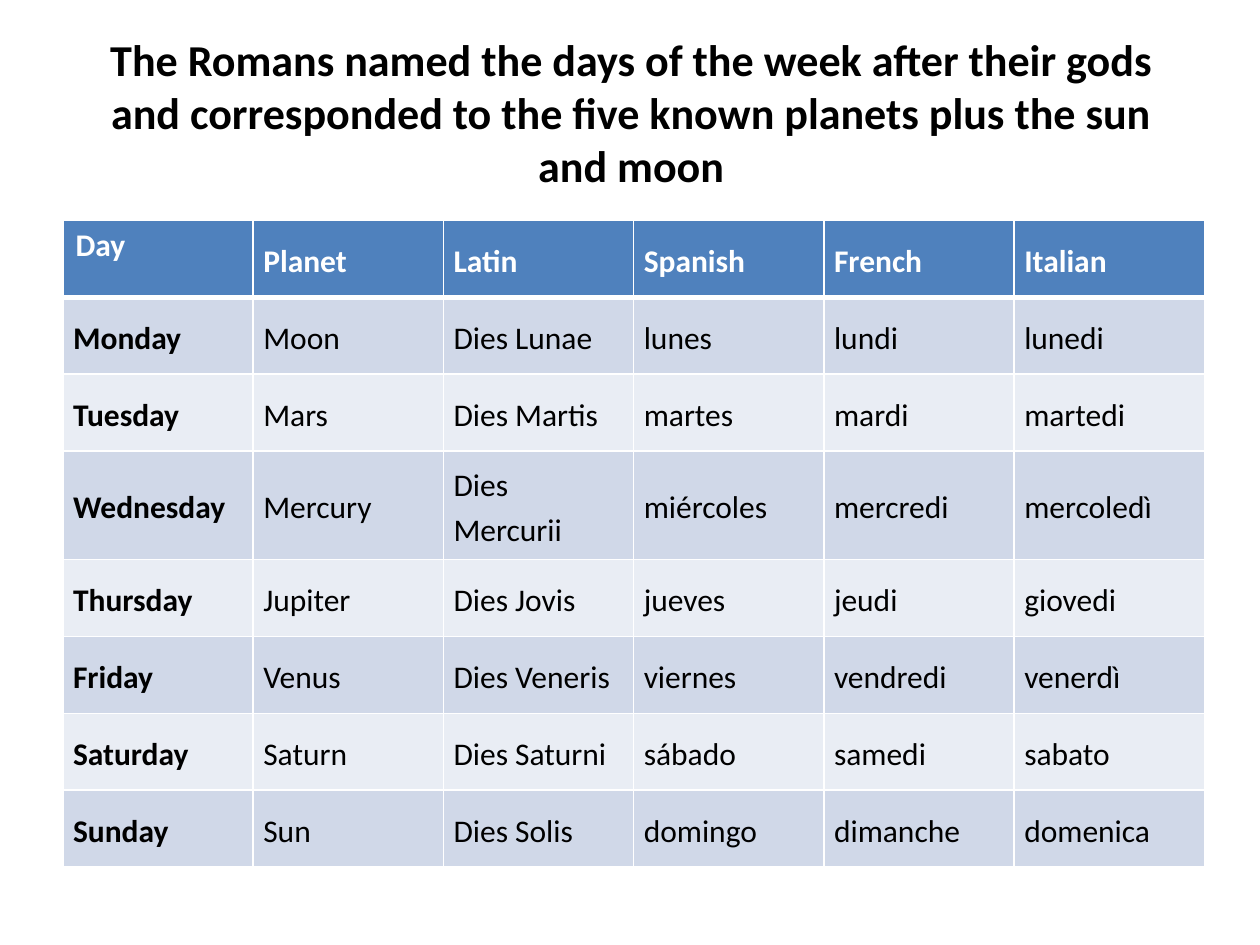
import pptx
import pptx.dml.color
import pptx.enum.text
import pptx.oxml.ns
import pptx.util
from lxml import etree

RGB = pptx.dml.color.RGBColor
ANCHOR = pptx.enum.text.MSO_ANCHOR
BLACK = RGB(0x00, 0x00, 0x00)
WHITE = RGB(0xFF, 0xFF, 0xFF)
HEADER_BLUE = RGB(0x4F, 0x81, 0xBD)
BAND_DARK = RGB(0xD0, 0xD8, 0xE8)
BAND_LIGHT = RGB(0xE9, 0xED, 0xF4)

EMU_PER_PX = 9144  # 100 px to the inch
TITLE = ("The Romans named the days of the week after their gods and "
         "corresponded to the five known planets plus the sun and moon")
WEEK = [
    ["Day", "Planet", "Latin", "Spanish", "French", "Italian"],
    ["Monday", "Moon", "Dies Lunae", "lunes", "lundi", "lunedi"],
    ["Tuesday", "Mars", "Dies Martis", "martes", "mardi", "martedi"],
    ["Wednesday", "Mercury", "Dies Mercurii", "miércoles", "mercredi", "mercoledì"],
    ["Thursday", "Jupiter", "Dies Jovis", "jueves", "jeudi", "giovedi"],
    ["Friday", "Venus", "Dies Veneris", "viernes", "vendredi", "venerdì"],
    ["Saturday", "Saturn", "Dies Saturni", "sábado", "samedi", "sabato"],
    ["Sunday", "Sun", "Dies Solis", "domingo", "dimanche", "domenica"],
]
COLUMN_WIDTH = 151
ROW_HEIGHT = 61
TALL_ROW, TALL_ROW_HEIGHT = 3, 86  # the Latin name for Wednesday takes two lines


def px(length):
    return pptx.util.Emu(length * EMU_PER_PX)


class SlideBuilder:
    """Holds the type style and the slide being filled."""

    font_name = "Calibri"
    title_size = 25.2
    cell_size = 18
    cell_inset = 8

    def __init__(self, slide):
        self.slide = slide

    def style(self, para, size, color, bold):
        para.font.name = self.font_name
        para.font.size = pptx.util.Pt(size)
        para.font.color.rgb = color
        para.font.bold = bold

    def title(self, text, left, top, width, height, bottom_inset):
        box = self.slide.shapes.title
        box.left, box.top, box.width, box.height = map(px, (left, top, width, height))
        frame = box.text_frame
        frame.text = text
        frame.word_wrap = True
        frame.auto_size = pptx.enum.text.MSO_AUTO_SIZE.NONE
        frame.vertical_anchor = ANCHOR.MIDDLE
        frame.margin_bottom = px(bottom_inset)
        para = frame.paragraphs[0]
        para.alignment = pptx.enum.text.PP_ALIGN.CENTER
        self.style(para, self.title_size, BLACK, True)

    def borders(self, cell, top, bottom):
        properties = cell._tc.get_or_add_tcPr()
        for side, points in (("L", 1), ("R", 1), ("T", top), ("B", bottom)):
            line = etree.SubElement(properties, pptx.oxml.ns.qn(f"a:ln{side}"),
                                    w=str(pptx.util.Pt(points)))
            fill = etree.SubElement(line, pptx.oxml.ns.qn("a:solidFill"))
            etree.SubElement(fill, pptx.oxml.ns.qn("a:srgbClr"), val=str(WHITE))

    def cell(self, cell, text, row, column):
        is_header = row == 0
        self.borders(cell, top=3 if row == 1 else 1, bottom=3 if is_header else 1)
        cell.fill.solid()
        band = BAND_DARK if row % 2 else BAND_LIGHT
        cell.fill.fore_color.rgb = HEADER_BLUE if is_header else band
        cell.text = text
        para = cell.text_frame.paragraphs[0]
        self.style(para, self.cell_size, WHITE if is_header else BLACK,
                   is_header or column == 0)
        # The corner cell keeps the default top anchor, insets and spacing
        if row or column:
            para.line_spacing = 1.15
            cell.vertical_anchor = ANCHOR.MIDDLE
            cell.margin_left = cell.margin_right = px(self.cell_inset)
            cell.margin_top = cell.margin_bottom = px(self.cell_inset)

    def table(self, rows, left, top):
        columns = len(rows[0])
        table = self.slide.shapes.add_table(
            len(rows), columns, px(left), px(top),
            px(COLUMN_WIDTH * columns), px(ROW_HEIGHT * len(rows))).table
        for column in table.columns:
            column.width = px(COLUMN_WIDTH)
        for r, texts in enumerate(rows):
            table.rows[r].height = px(TALL_ROW_HEIGHT if r == TALL_ROW else ROW_HEIGHT)
            for c, text in enumerate(texts):
                self.cell(table.cell(r, c), text, r, c)


def main():
    deck = pptx.Presentation()
    deck.slide_width, deck.slide_height = px(1000), px(750)
    title_only = deck.slide_layouts[5]
    page = SlideBuilder(deck.slides.add_slide(title_only))

    # Heading
    page.title(TITLE, 51, 44, 900, 125, bottom_inset=41)

    # Names of the days
    page.table(WEEK, 50, 175)

    deck.save("out.pptx")


if __name__ == "__main__":
    main()
